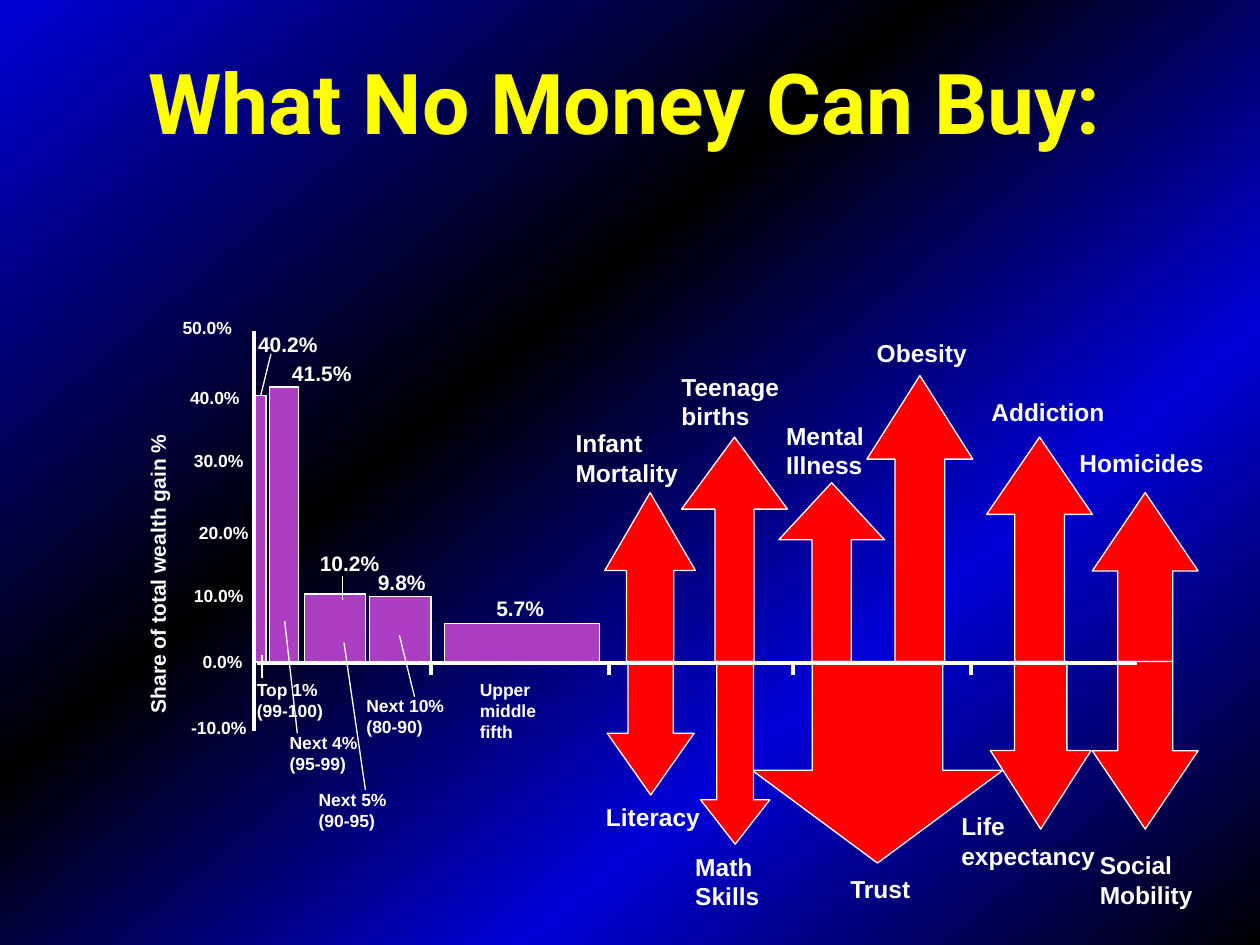
import copy

import pptx
import pptx.dml.color
import pptx.enum.shapes
import pptx.enum.text
import pptx.oxml.ns
import pptx.util
from lxml import etree

Pt = pptx.util.Pt
Shapes = pptx.enum.shapes.MSO_SHAPE

COLORS = {
    "blue": "0000D6",
    "black": "000000",
    "bar": "AC3EC1",
    "arrow": "FF0000",
    "white": "FFFFFF",
    "title": "FFFF00",
}
POINTS_PER_PERCENT = 3.78
BASELINE = 189

BARS = [
    (40.2, 0.5, 6.5, (-4.6, -3.2, 50.4)),
    (41.5, 9, 16.6, (14.8, 13.3, 50.4)),
    (10.2, 29.2, 34.6, (30.7, 122, 50.4)),
    (9.8, 66, 35.3, (63.8, 132.8, 42.5)),
    (5.7, 109.2, 88.6, (131.5, 148, 42.5)),
]
GROUPS = [
    ("Top 1% (99-100)", -5.3, 195.5, 2),
    ("Next 4% (95-99)", 13.4, 225.7, 2),
    ("Next 5% (90-95)", 30, 258.1, 2),
    ("Next 10% (80-90)", 57.3, 204.8, 2),
    ("Upper middle fifth", 122.1, 195.5, 3),
]
SCALE = [
    ("50.0%", -47.8, -11.2, 44.6),
    ("40.0%", -43.5, 28.4, 44.6),
    ("30.0%", -41.3, 64.4, 44.6),
    ("20.0%", -38.4, 105.5, 44.6),
    ("10.0%", -41.3, 141.5, 44.6),
    ("0.0%", -36.3, 179.6, 44.6),
    ("-10.0%", -42.8, 217.1, 50.4),
]
LEADERS = [
    (9.8, 13.3, 4, 37),
    (50.8, 140, 50.8, 153.7),
    (4.8, 198.4, 4.8, 185.4),
    (24.9, 230, 17.7, 166),
    (63.8, 262.4, 51.6, 178.2),
    (91.9, 209.2, 83.2, 173.9),
]
RISING = [
    ("Infant Mortality", (-0.2, 52.2, 77.8, 2), (23.6, 51.8, 96.5, 0.52, 0.86)),
    ("Obesity", (171.9, 0.4, 77.8, 1), (173.4, 60.5, 163.4, 0.47, 0.79)),
    ("Addiction", (237.4, 34.2, 85, 1), (241.8, 60.5, 128.2, 0.47, 0.73)),
    ("Homicides", (287.8, 63.7, 95.8, 1), (302.2, 60.5, 96.5, 0.52, 0.74)),
    ("Teenage births", (60.3, 19.8, 103, 2), (67.5, 60.5, 128.2, 0.37, 0.68)),
    ("Mental Illness", (120.1, 47.9, 87.1, 2), (123, 60.5, 102.2, 0.37, 0.54)),
]
FALLING = [
    ("Literacy", (17.1, 266, 72.7, 1), (25, 49.7, 76.3, 0.52, 0.71)),
    ("Trust", (156.8, 307.1, 59.8, 1), (107.8, 143.3, 115.2, 0.52, 0.46)),
    ("Social Mobility", (299.4, 293.4, 77, 2), (302.2, 60.5, 95.8, 0.52, 0.74)),
    ("Life expectancy", (220.2, 271.1, 104.4, 2), (243.9, 57.6, 95.8, 0.52, 0.78)),
    ("Math Skills", (68.2, 294.1, 72.7, 2), (78.3, 39.6, 104.4, 0.53, 0.64)),
]


def rgb(name):
    return pptx.dml.color.RGBColor.from_string(COLORS[name])


def add_text(page, text, left, top, width, size, lines=1, color="white",
             font="Arial", align=None):
    height = size * 1.2 * lines + 7.2
    label = page.shapes.add_textbox(Pt(left), Pt(top), Pt(width), Pt(height))
    frame = label.text_frame
    frame.word_wrap = True
    frame.auto_size = pptx.enum.text.MSO_AUTO_SIZE.SHAPE_TO_FIT_TEXT
    para = frame.paragraphs[0]
    para.text = text
    para.alignment = align
    para.font.name = font
    para.font.size = Pt(size)
    para.font.bold = True
    para.font.color.rgb = rgb(color)
    return label


def add_line(page, start_x, start_y, end_x, end_y, weight=0.75):
    line = page.shapes.add_connector(
        pptx.enum.shapes.MSO_CONNECTOR.STRAIGHT,
        Pt(start_x), Pt(start_y), Pt(end_x), Pt(end_y))
    line.line.color.rgb = rgb("white")
    line.line.width = Pt(weight)
    properties = line.element.find(pptx.oxml.ns.qn("p:spPr"))
    etree.SubElement(properties, pptx.oxml.ns.qn("a:effectLst"))


def add_filled(page, kind, left, top, width, height, color):
    shape = page.shapes.add_shape(kind, Pt(left), Pt(top), Pt(width), Pt(height))
    shape.shadow.inherit = False
    shape.fill.solid()
    shape.fill.fore_color.rgb = rgb(color)
    shape.line.color.rgb = rgb("white")
    shape.line.width = Pt(0.75)
    return shape


def paint_background(page):
    fill = page.background.fill
    fill.gradient()
    fill.gradient_angle = 310
    stops = page.element.find(".//" + pptx.oxml.ns.qn("a:gsLst"))
    for stop in list(stops):
        stops.append(copy.deepcopy(stop))
    colors = [(0, "blue"), (0.39, "black"), (0.69, "blue"), (1, "black")]
    for stop, (position, color) in zip(fill.gradient_stops, colors):
        stop.position = position
        stop.color.rgb = rgb(color)


def place_title(page, box):
    left, top, width = box
    add_text(page, "What No Money Can Buy:", left, top, width, 48,
             color="title", font="Roboto", align=pptx.enum.text.PP_ALIGN.CENTER)


def place_wealth_chart(page, box):
    left, top, width, height = box
    for value, x, bar_width, (label_x, label_y, label_width) in BARS:
        bar_height = value * POINTS_PER_PERCENT
        add_filled(page, Shapes.RECTANGLE, left + x, top + BASELINE - bar_height,
                   bar_width, bar_height, "bar")
        add_text(page, f"{value}%", left + label_x, top + label_y, label_width, 12)
    add_line(page, left, top, left, top + height, 2.25)
    add_line(page, left, top + BASELINE + 0.7, left + width, top + BASELINE + 0.7)
    for text, x, y, lines in GROUPS:
        add_text(page, text, left + x, top + y, 61.2, 10, lines)
    for text, x, y, label_width in SCALE:
        add_text(page, text, left + x, top + y, label_width, 10)
    axis_title = add_text(page, "Share of total wealth gain %",
                          left - 156.5, top + 113.4, 203, 12)
    axis_title.rotation = 270
    for start_x, start_y, end_x, end_y in LEADERS:
        add_line(page, left + start_x, top + start_y, left + end_x, top + end_y)


def place_outcomes(page, box, outcomes, kind):
    left, top = box
    for text, (x, y, width, lines), arrow in outcomes:
        arrow_x, arrow_width, length, shaft, head = arrow
        base = top + BASELINE
        arrow_top = base - length if kind == Shapes.UP_ARROW else base
        shape = add_filled(page, kind, left + arrow_x, arrow_top,
                           arrow_width, length, "arrow")
        shape.adjustments[0] = shaft
        shape.adjustments[1] = head
        add_text(page, text, left + x, top + y, width, 14, lines)


def place_baseline(page, box):
    left, top, width = box
    add_line(page, left, top, left + width, top, 2.25)
    for x in (99.2, 200.8, 305.9, 408.1):
        add_line(page, left + x, top, left + x, top + 7.2, 2.25)


def main():
    deck = pptx.Presentation()
    deck.slide_width, deck.slide_height = Pt(720), Pt(540)
    page = deck.slides.add_slide(deck.slide_layouts[6])
    paint_background(page)
    place_title(page, (-6, 25.2, 726))
    place_wealth_chart(page, (145, 189, 493, 228.6))
    place_outcomes(page, (322, 189), RISING, Shapes.UP_ARROW)
    place_outcomes(page, (322, 189), FALLING, Shapes.DOWN_ARROW)
    place_baseline(page, (147, 378.7, 503))
    deck.save("out.pptx")


if __name__ == "__main__":
    main()
